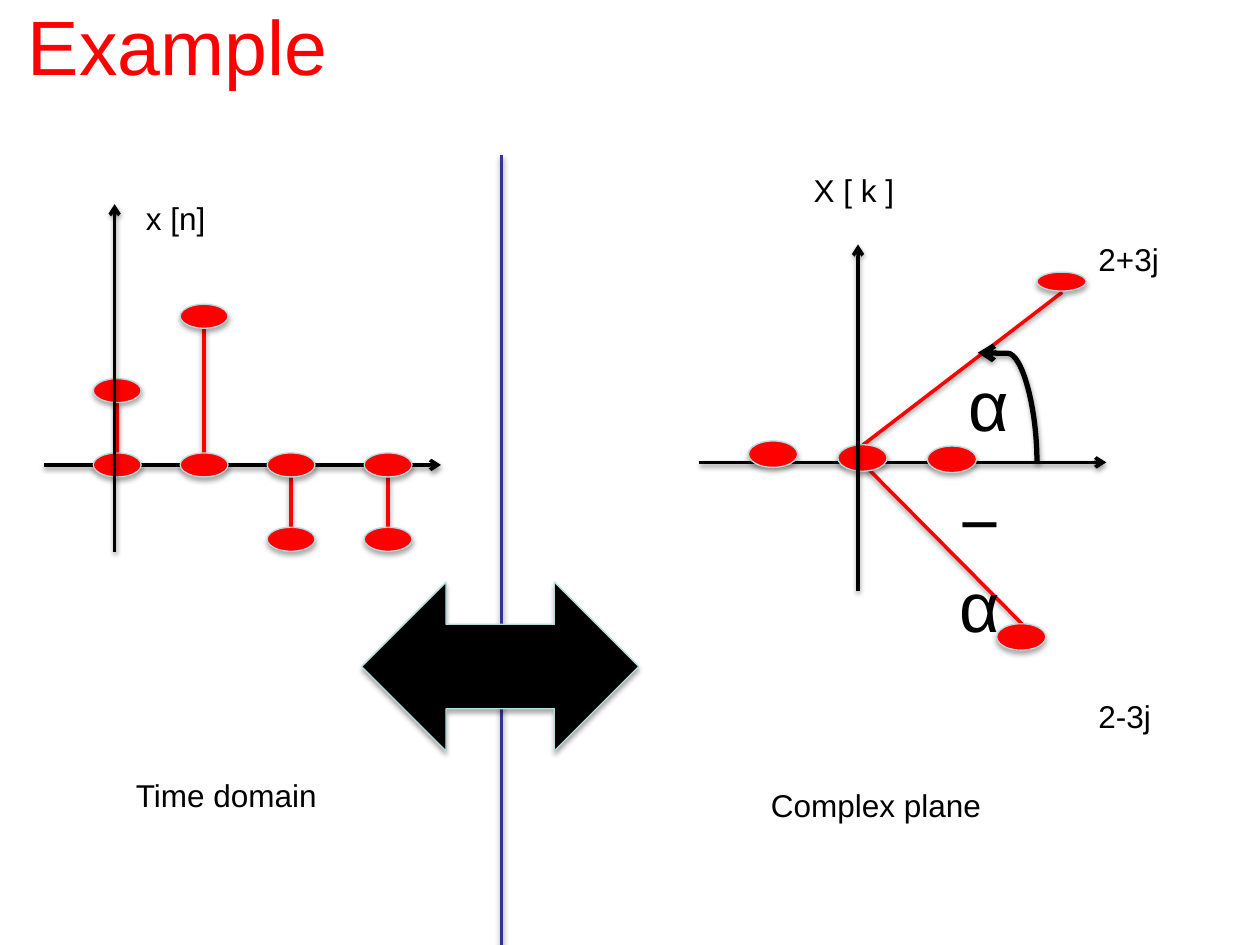
from lxml import etree
from pptx import Presentation
from pptx.dml.color import RGBColor
from pptx.enum import shapes as sh, text as tx
from pptx.oxml import ns
from pptx.util import Inches, Pt

RED, BLACK, NAVY, EDGE = "FF0000", "000000", "333399", "B6DCDF"

# Signal samples: centre x and value
SAMPLES = [(0.93, 1), (1.62, 2), (2.31, -1), (3.08, -1)]
BASE, UNIT = 3.69, 0.59
SIZE = (0.38, 0.19)

# Spectrum dots: left, top, width, height
DOTS = [(5.94, 3.5, 0.39, 0.21), (7.91, 4.95, 0.39, 0.21), (8.23, 2.16, 0.39, 0.15),
        (6.65, 3.53, 0.39, 0.21), (7.36, 3.54, 0.39, 0.21)]
RAYS = [(6.81, 3.64, 8.11, 4.95), (8.43, 2.32, 6.85, 3.53)]

# Axes: start x, y, end x, y
FLAT = [(0.35, BASE, 3.5, BASE), (5.55, 3.67, 8.78, 3.67)]
UP = [(0.91, 4.38, 0.91, 1.62), (6.81, 4.69, 6.81, 1.94)]

# Labels: text, left, top, width, height, size, wrap
LABELS = [
    ("Time domain", 0.98, 6.11, 1.65, 0.4, 18, False),
    ("Complex plane", 6.02, 6.19, 1.89, 0.4, 18, False),
    ("x [n]", 1.06, 1.53, 0.68, 0.4, 18, False),
    ("X [ k ]", 6.36, 1.31, 0.85, 0.4, 18, False),
    ("2+3j", 8.62, 1.86, 0.94, 0.4, 18, True),
    ("2-3j", 8.62, 5.48, 0.94, 0.4, 18, True),
    ("α", 7.59, 2.82, 0.56, 0.77, 40, False),
    ("−α", 7.52, 3.75, 0.7, 1.4, 40, True),
]

prs = Presentation()
prs.slide_width, prs.slide_height = Inches(10), Inches(7.5)
slide = prs.slides.add_slide(prs.slide_layouts[5])


def rgb(code):
    return RGBColor.from_string(code)


def sub(node, tag, **attrs):
    return etree.SubElement(node, ns.qn(tag), {k: str(v) for k, v in attrs.items()})


def shade(item, alpha, dist):
    fx = sub(item._element.spPr, "a:effectLst")
    cast = sub(fx, "a:outerShdw", blurRad=Pt(3.1), dist=Pt(dist),
               dir=5400000, rotWithShape=0)
    sub(sub(cast, "a:srgbClr", val=BLACK), "a:alpha", val=alpha * 1000)


def line(ends, color, width=2, arrow=False, kind=sh.MSO_CONNECTOR.STRAIGHT):
    item = slide.shapes.add_connector(kind, *map(Inches, ends))
    item.line.color.rgb = rgb(color)
    item.line.width = Pt(width)
    if arrow:
        sub(item.line._get_or_add_ln(), "a:tailEnd", type="arrow")
    shade(item, 38, 1.6)
    return item


def solid(kind, box, color):
    item = slide.shapes.add_shape(kind, *map(Inches, box))
    item.fill.solid()
    item.fill.fore_color.rgb = rgb(color)
    item.line.color.rgb = rgb(EDGE)
    item.line.width = Pt(0.75)
    shade(item, 35, 1.8)


def dot(box):
    solid(sh.MSO_SHAPE.OVAL, box, RED)


def write(frame, words, size, color):
    para = frame.paragraphs[0]
    para.alignment = tx.PP_ALIGN.LEFT
    run = para.add_run()
    run.text = words
    run.font.name, run.font.size = "Arial", Pt(size)
    run.font.color.rgb = rgb(color)


# Title
title = slide.shapes.title
title.left, title.top, title.width, title.height = map(Inches, (0.12, -0.27, 9, 1.25))
title.text_frame.vertical_anchor = tx.MSO_ANCHOR.MIDDLE
write(title.text_frame, "Example", 44, RED)

# Divider and horizontal axes
line((3.98, 1.23, 3.98, 7.5), NAVY)
for ends in FLAT:
    line(ends, BLACK, arrow=True)

# Time domain stems
wide, high = SIZE
for x, value in SAMPLES:
    tip = BASE - value * UNIT
    gap = high / 2 if value > 0 else -high / 2
    line((x, tip + gap, x, BASE - gap), RED)
    for y in (tip, BASE):
        dot((x - wide / 2, y - high / 2, wide, high))

# Complex plane rays and dots
for ends in RAYS:
    line(ends, RED)
for box in DOTS:
    dot(box)

# Vertical axes
for ends in UP:
    line(ends, BLACK, arrow=True)

# Angle arc: a curve turned a quarter to the left
arc = line((7.56, 3.47, 8.43, 3), BLACK, 3, True, sh.MSO_CONNECTOR.CURVE)
form = arc._element.spPr
form.find(ns.qn("a:xfrm")).set("rot", "16200000")
geom = form.find(ns.qn("a:prstGeom"))
guides = geom.find(ns.qn("a:avLst"))
if guides is None:
    guides = sub(geom, "a:avLst")
sub(guides, "a:gd", name="adj1", fmla="val 99600")

# Labels
for words, *box, size, wrap in LABELS:
    frame = slide.shapes.add_textbox(*map(Inches, box)).text_frame
    frame.word_wrap = wrap
    frame.auto_size = tx.MSO_AUTO_SIZE.SHAPE_TO_FIT_TEXT
    write(frame, words, size, BLACK)

# Two-way arrow
solid(sh.MSO_SHAPE.LEFT_RIGHT_ARROW, (2.87, 4.62, 2.2, 1.34), BLACK)

prs.save("out.pptx")
